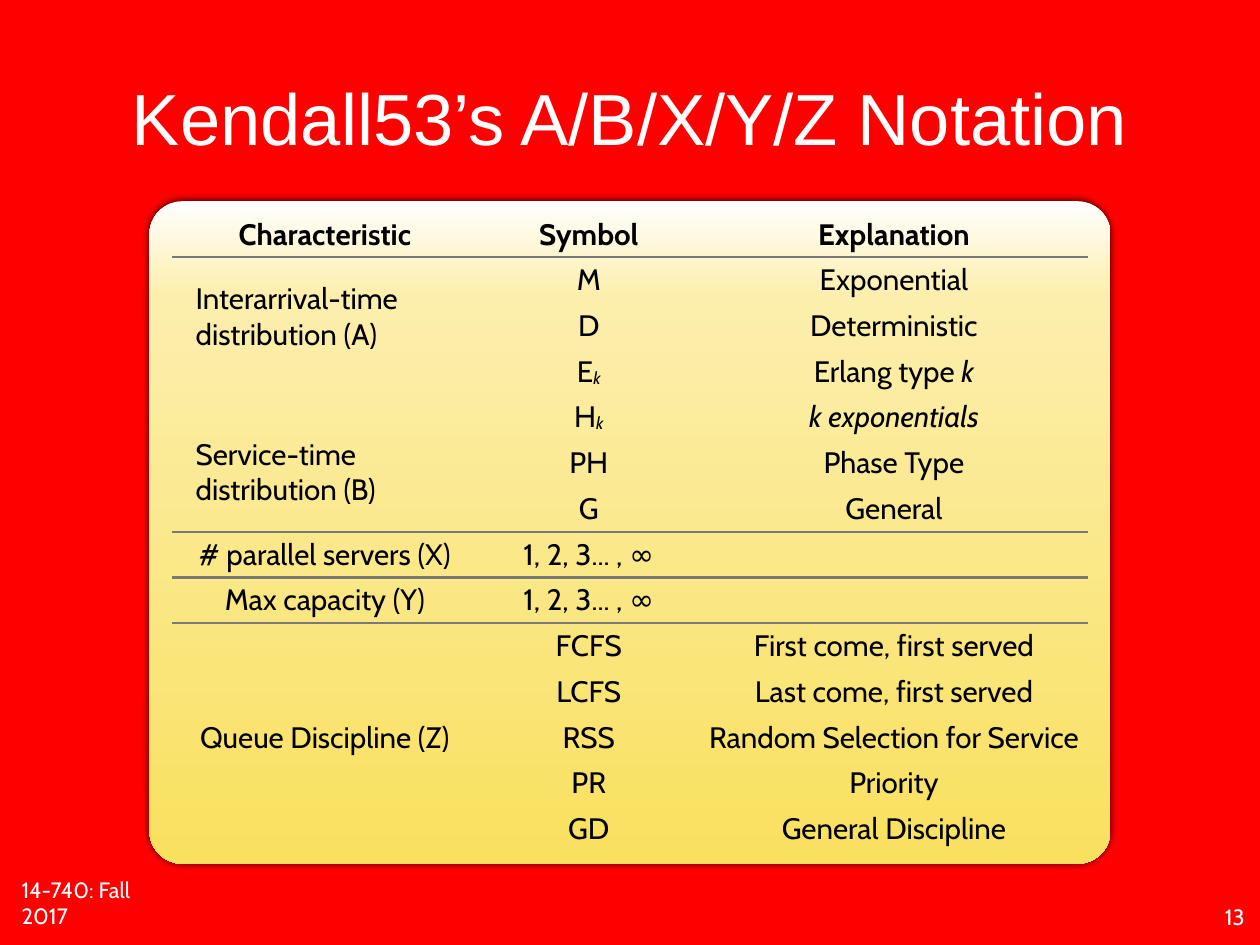
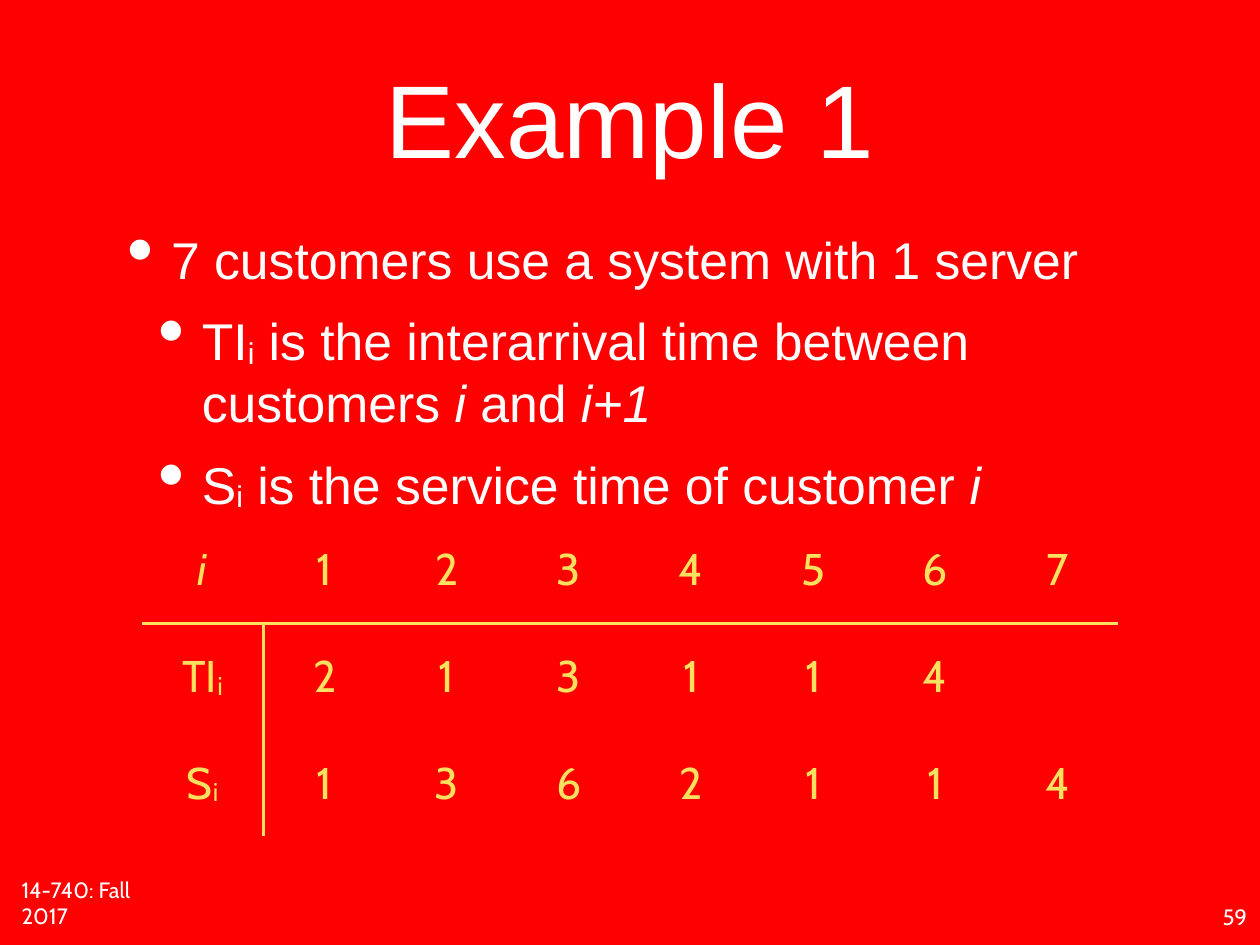
from dataclasses import dataclass

from lxml import etree
from pptx import Presentation
from pptx.dml.color import RGBColor
from pptx.enum.shapes import MSO_SHAPE
from pptx.enum.text import MSO_ANCHOR, PP_ALIGN
from pptx.oxml.ns import qn
from pptx.presentation import Presentation as Deck
from pptx.shapes.autoshape import Shape
from pptx.slide import Slide
from pptx.table import Table, _Cell
from pptx.text.text import TextFrame, _Paragraph
from pptx.util import Pt

LEFT, CENTER = PP_ALIGN.LEFT, PP_ALIGN.CENTER
TOP, MIDDLE, BOTTOM = MSO_ANCHOR.TOP, MSO_ANCHOR.MIDDLE, MSO_ANCHOR.BOTTOM
ROUNDED_RECTANGLE = MSO_SHAPE.ROUNDED_RECTANGLE

RED, WHITE, BLACK = "FF0000", "FFFFFF", "000000"
YELLOW, PALE_YELLOW, GRAY = "F9E05E", "FCEFAE", "797979"
HEADING_FONT, DETAIL_FONT = "Arial", "Cabin"
MARGIN = 4


@dataclass(frozen=True)
class Run:
    text: str
    italic: bool = False
    subscript: bool = False


@dataclass(frozen=True)
class Style:
    font: str
    size: float
    color: str
    bold: bool = False


@dataclass(frozen=True)
class Box:
    left: float
    top: float
    width: float
    height: float


@dataclass(frozen=True)
class Bullet:
    runs: tuple[Run, ...]
    level: int = 0


@dataclass(frozen=True)
class Rules:
    color: str
    width: float
    below_rows: tuple[int, ...]
    after_columns: tuple[int, ...] = ()


Content = str | tuple[Run, ...]

DETAIL = Style(DETAIL_FONT, 18, WHITE)
BODY = Style(HEADING_FONT, 42, WHITE)
NOTATION = Style(DETAIL_FONT, 24, BLACK)
NOTATION_HEADER = Style(DETAIL_FONT, 24, BLACK, True)
TIMES = Style(DETAIL_FONT, 36, YELLOW)

TITLE_BOX = Box(100, 20, 824, 150)
FOOTER_BOX = Box(13.5, 730, 132, 29)
NUMBER_BOX = Box(983.5, 730, 40, 29)
BODY_BOX = Box(100, 181, 824, 252)
CARD_BOX = Box(121.5, 163.5, 781, 538.5)

INDEX = Run("i", italic=True)
SMALL_I = Run("i", subscript=True)
SMALL_K = Run("k", italic=True, subscript=True)

NOTATION_ROWS: list[list[Content]] = [
    ["Characteristic", "Symbol", "Explanation"],
    ["Interarrival-time distribution (A)", "M", "Exponential"],
    ["", "D", "Deterministic"],
    ["", (Run("E"), SMALL_K), (Run("Erlang type "), Run("k", italic=True))],
    ["Service-time distribution (B)", (Run("H"), SMALL_K), (Run("k exponentials", italic=True),)],
    ["", "PH", "Phase Type"],
    ["", "G", "General"],
    ["# parallel servers (X)", "1, 2, 3... , ∞", ""],
    ["Max capacity (Y)", "1, 2, 3... , ∞", ""],
    ["Queue Discipline (Z)", "FCFS", "First come, first served"],
    ["", "LCFS", "Last come, first served"],
    ["", "RSS", "Random Selection for Service"],
    ["", "PR", "Priority"],
    ["", "GD", "General Discipline"],
]
NOTATION_SPANS = ((1, 3), (4, 6), (9, 13))
NOTATION_RULES = Rules(GRAY, 2, (0, 6, 7, 8))

TIME_ROWS: list[list[Content]] = [
    [(INDEX,), *"1234567"],
    [(Run("TI"), SMALL_I), *"213114", ""],
    [(Run("S"), SMALL_I), *"1362114"],
]
TIME_RULES = Rules(YELLOW, 3, (0,), (0,))

BULLETS = (
    Bullet((Run("7 customers use a system with 1 server"),)),
    Bullet((Run("TI"), SMALL_I, Run(" is the interarrival time between customers "),
            INDEX, Run(" and "), Run("i+1", italic=True)), 1),
    Bullet((Run("S"), SMALL_I, Run(" is the service time of customer "), INDEX), 1),
)


def rgb(color: str) -> RGBColor:
    """Turn a hex string into a colour."""
    return RGBColor.from_string(color)


def write(paragraph: _Paragraph, content: Content, style: Style) -> None:
    """Add the content to the paragraph run by run."""
    runs = (Run(content),) if isinstance(content, str) else content
    for part in runs:
        run = paragraph.add_run()
        run.text = part.text
        run.font.name = style.font
        run.font.size = Pt(style.size)
        run.font.color.rgb = rgb(style.color)
        run.font.bold = style.bold
        run.font.italic = part.italic
        if part.subscript:
            run._r.get_or_add_rPr().set("baseline", "-6000")


def set_margins(target: TextFrame | _Cell, margin: float) -> None:
    """Give all four sides the same inset."""
    target.margin_left = target.margin_right = Pt(margin)
    target.margin_top = target.margin_bottom = Pt(margin)


def add_text_frame(slide: Slide, box: Box, anchor: MSO_ANCHOR, wrap: bool = True) -> TextFrame:
    """Add an empty text box and return its frame."""
    shape = slide.shapes.add_textbox(Pt(box.left), Pt(box.top), Pt(box.width), Pt(box.height))
    frame = shape.text_frame
    frame.word_wrap = wrap
    frame.vertical_anchor = anchor
    set_margins(frame, MARGIN)
    return frame


def add_label(slide: Slide, box: Box, text: str, style: Style, align: PP_ALIGN,
              anchor: MSO_ANCHOR, wrap: bool = True) -> None:
    """Add a text box with one paragraph."""
    paragraph = add_text_frame(slide, box, anchor, wrap).paragraphs[0]
    paragraph.alignment = align
    write(paragraph, text, style)


def add_slide(presentation: Deck, title: str, title_size: float, number: int) -> Slide:
    """Add a red slide with its title, footer and number."""
    slide = presentation.slides.add_slide(presentation.slide_layouts[6])
    fill = slide.background.fill
    fill.solid()
    fill.fore_color.rgb = rgb(RED)
    add_label(slide, FOOTER_BOX, "14-740: Fall 2017", DETAIL, LEFT, BOTTOM)
    add_label(slide, TITLE_BOX, title, Style(HEADING_FONT, title_size, WHITE), CENTER, MIDDLE)
    add_label(slide, NUMBER_BOX, str(number), DETAIL, CENTER, TOP, False)
    return slide


def add_color(parent: etree._Element, color: str) -> etree._Element:
    """Add a colour element to the parent."""
    return etree.SubElement(parent, qn("a:srgbClr"), val=color)


def add_card(slide: Slide, box: Box) -> Shape:
    """Add the rounded card with its gradient and soft shadow."""
    card = slide.shapes.add_shape(ROUNDED_RECTANGLE, Pt(box.left), Pt(box.top),
                                  Pt(box.width), Pt(box.height))
    card.adjustments[0] = 0.05
    card.line.fill.background()
    card.fill.background()
    card.shadow.inherit = False
    properties = card._element.spPr
    gradient = etree.Element(qn("a:gradFill"), rotWithShape="1")
    stops = etree.SubElement(gradient, qn("a:gsLst"))
    for percent, color in ((0, WHITE), (14, PALE_YELLOW), (100, YELLOW)):
        add_color(etree.SubElement(stops, qn("a:gs"), pos=str(percent * 1000)), color)
    etree.SubElement(gradient, qn("a:lin"), ang="5400000", scaled="0")
    properties.replace(properties.find(qn("a:noFill")), gradient)
    shadow = etree.SubElement(properties.find(qn("a:effectLst")), qn("a:outerShdw"),
                              blurRad=str(Pt(6)), dist="0", dir="18900000", rotWithShape="0")
    etree.SubElement(add_color(shadow, BLACK), qn("a:alpha"), val="80000")
    return card


def set_borders(cell: _Cell, row: int, column: int, rules: Rules) -> None:
    """Draw the cell sides that lie on a rule and clear the others."""
    last_row = row + cell.span_height - 1
    sides = {
        "L": column - 1 in rules.after_columns and row > 0,
        "R": column in rules.after_columns and row > 0,
        "T": row - 1 in rules.below_rows,
        "B": last_row in rules.below_rows,
    }
    properties = cell._tc.get_or_add_tcPr()
    for side, shown in sides.items():
        line = etree.SubElement(properties, qn(f"a:ln{side}"), w=str(Pt(rules.width)))
        if shown:
            add_color(etree.SubElement(line, qn("a:solidFill")), rules.color)
        else:
            etree.SubElement(line, qn("a:noFill"))


def add_table(slide: Slide, left: float, top: float, widths: list[float], row_height: float,
              rows: list[list[Content]], styles: list[Style], margin: float, rules: Rules,
              spans: tuple[tuple[int, int], ...] = ()) -> Table:
    """Add an unfilled table whose first column may span rows."""
    table = slide.shapes.add_table(len(rows), len(widths), Pt(left), Pt(top), Pt(sum(widths)),
                                   Pt(row_height * len(rows))).table
    table.first_row = table.horz_banding = False
    for column, width in zip(table.columns, widths):
        column.width = Pt(width)
    for first, last in spans:
        table.cell(first, 0).merge(table.cell(last, 0))
    for row, (contents, style) in enumerate(zip(rows, styles)):
        table.rows[row].height = Pt(row_height)
        for column, content in enumerate(contents):
            cell = table.cell(row, column)
            set_borders(cell, row, column, rules)
            cell.fill.background()
            cell.vertical_anchor = MIDDLE
            set_margins(cell, margin)
            paragraph = cell.text_frame.paragraphs[0]
            paragraph.alignment = CENTER
            if content:
                write(paragraph, content, style)
    return table


def add_bullets(slide: Slide, box: Box, bullets: tuple[Bullet, ...]) -> None:
    """Add the bulleted body text."""
    frame = add_text_frame(slide, box, TOP)
    for position, bullet in enumerate(bullets):
        paragraph = frame.add_paragraph() if position else frame.paragraphs[0]
        paragraph.level = bullet.level
        paragraph.space_before = Pt(16 if position else 0)
        properties = paragraph._p.get_or_add_pPr()
        properties.set("marL", str(Pt(35 + 25 * bullet.level)))
        properties.set("indent", str(Pt(-35)))
        etree.SubElement(properties, qn("a:buSzPct"), val="150000")
        etree.SubElement(properties, qn("a:buChar"), char="•")
        write(paragraph, bullet.runs, BODY)


def build_notation(presentation: Deck) -> None:
    """Build the slide on the notation."""
    slide = add_slide(presentation, "Kendall53’s A/B/X/Y/Z Notation", 58.8, 13)
    add_card(slide, CARD_BOX)
    styles = [NOTATION_HEADER] + [NOTATION] * (len(NOTATION_ROWS) - 1)
    table = add_table(slide, 140, 172, [248, 181, 315], 37.18, NOTATION_ROWS, styles,
                      MARGIN, NOTATION_RULES, NOTATION_SPANS)
    for row, anchor in ((1, TOP), (4, BOTTOM)):
        cell = table.cell(row, 0)
        cell.vertical_anchor = anchor
        set_margins(cell, 19)
        cell.text_frame.paragraphs[0].alignment = LEFT


def build_example(presentation: Deck) -> None:
    """Build the slide with the first example."""
    slide = add_slide(presentation, "Example 1", 84, 59)
    add_bullets(slide, BODY_BOX, BULLETS)
    add_table(slide, 115, 420, [99.25] * 8, 86.6, TIME_ROWS, [TIMES] * 3, 3, TIME_RULES)


def main() -> None:
    """Build and save the presentation."""
    presentation = Presentation()
    presentation.slide_width, presentation.slide_height = Pt(1024), Pt(768)
    build_notation(presentation)
    build_example(presentation)
    presentation.save("out.pptx")


if __name__ == "__main__":
    main()
